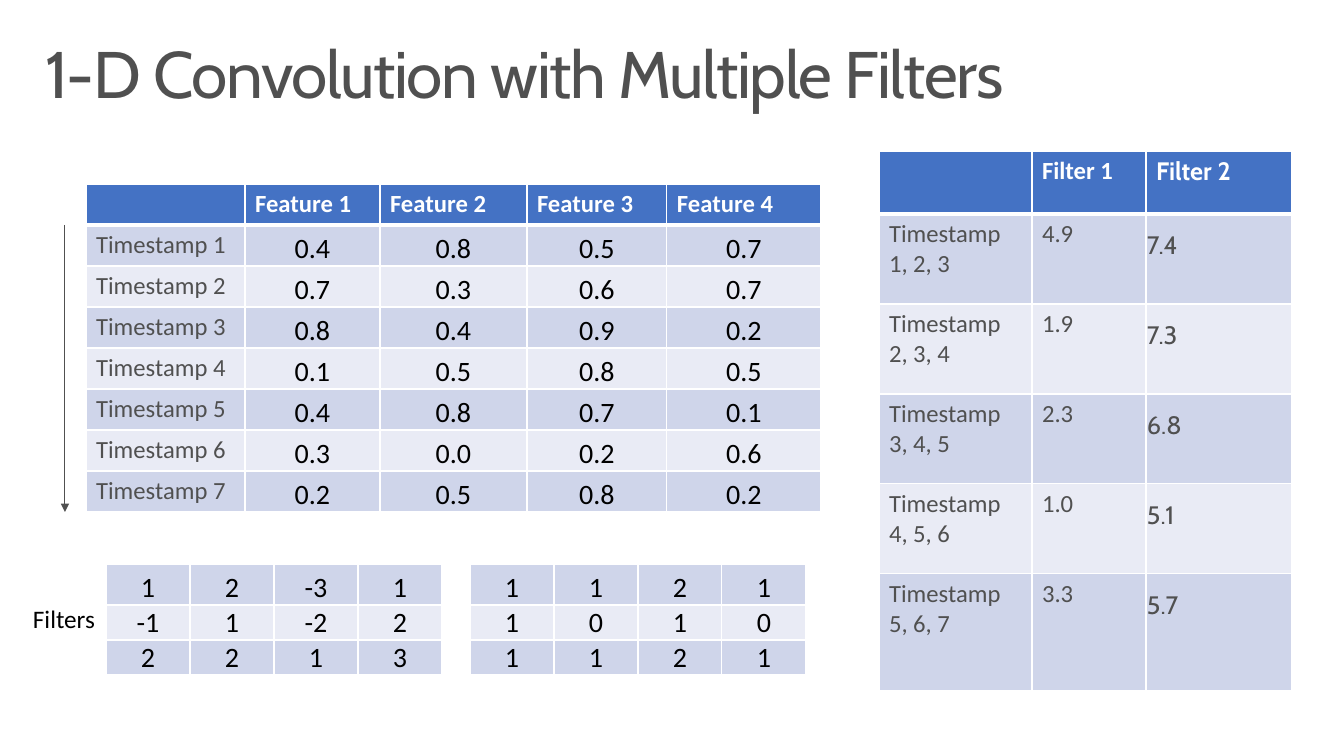
from lxml import etree
from pptx import Presentation, util as u
from pptx.dml.color import RGBColor
from pptx.enum import shapes, text
from pptx.oxml import ns

COLORS = {"header": "4472C4", "odd": "CFD5EA", "even": "E9EBF5",
          "white": "FFFFFF", "grey": "505050", "black": "000000"}

FEATURES = [
    ["", "Feature 1", "Feature 2", "Feature 3", "Feature 4"],
    ["Timestamp 1", "0.4", "0.8", "0.5", "0.7"],
    ["Timestamp 2", "0.7", "0.3", "0.6", "0.7"],
    ["Timestamp 3", "0.8", "0.4", "0.9", "0.2"],
    ["Timestamp 4", "0.1", "0.5", "0.8", "0.5"],
    ["Timestamp 5", "0.4", "0.8", "0.7", "0.1"],
    ["Timestamp 6", "0.3", "0.0", "0.2", "0.6"],
    ["Timestamp 7", "0.2", "0.5", "0.8", "0.2"],
]
RESULTS = [
    ["", "Filter 1", "Filter 2"],
    ["Timestamp 1, 2, 3", "4.9", "7.4"],
    ["Timestamp 2, 3, 4", "1.9", "7.3"],
    ["Timestamp 3, 4, 5", "2.3", "6.8"],
    ["Timestamp 4, 5, 6", "1.0", "5.1"],
    ["Timestamp 5, 6, 7", "3.3", "5.7"],
]
FILTERS = [
    [["1", "2", "-3", "1"], ["-1", "1", "-2", "2"], ["2", "2", "1", "3"]],
    [["1", "1", "2", "1"], ["1", "0", "1", "0"], ["1", "1", "2", "1"]],
]


def px(length):
    return u.Emu(round(length * 914400 / 100.8))


def rgb(name):
    return RGBColor.from_string(COLORS[name])


def write(paragraph, words, size, color, face="Calibri", bold=False):
    run = paragraph.add_run()
    run.text = words
    run.font.size = u.Pt(size)
    run.font.name = face
    run.font.bold = bold
    run.font.color.rgb = rgb(color)
    return run


def border(cell, top=1, bottom=1):
    """Give a cell white edges, with top and bottom widths in points."""
    props = cell._tc.get_or_add_tcPr()
    edges = {"a:lnL": 1, "a:lnR": 1, "a:lnT": top, "a:lnB": bottom}
    for place, (tag, width) in enumerate(edges.items()):
        edge = etree.Element(ns.qn(tag), w=str(u.Pt(width)))
        fill = etree.SubElement(edge, ns.qn("a:solidFill"))
        etree.SubElement(fill, ns.qn("a:srgbClr"), val=COLORS["white"])
        props.insert(place, edge)


def tighten(cell):
    cell.margin_left = cell.margin_right = cell.margin_top = px(1)
    cell.margin_bottom = 0


def number_cell(cell, words):
    tighten(cell)
    cell.vertical_anchor = text.MSO_ANCHOR.BOTTOM
    paragraph = cell.text_frame.paragraphs[0]
    paragraph.alignment = text.PP_ALIGN.CENTER
    write(paragraph, words, 20, "black")


def label_cell(cell, words):
    write(cell.text_frame.paragraphs[0], words, 17.6, "grey")


def second_result_cell(cell, words):
    tighten(cell)
    paragraph = cell.text_frame.paragraphs[0]
    paragraph.line_spacing = 1.5
    write(paragraph, words, 18, "grey", "Cabin")


def header_cell(cell, words):
    if words:
        face, size = ("Cabin", 18) if words == "Filter 2" else ("Calibri", 17.6)
        write(cell.text_frame.paragraphs[0], words, size, "white", face, True)


def grid(slide, left, top, widths, heights, rows, writers, header=True):
    """Place a banded table; writers holds one cell writer per column."""
    table = slide.shapes.add_table(len(rows), len(widths), px(left), px(top),
                                   px(sum(widths)), px(sum(heights))).table
    table.first_row = header
    table.horz_banding = False
    for column, width in zip(table.columns, widths):
        column.width = px(width)
    for r, (row, height) in enumerate(zip(rows, heights)):
        table.rows[r].height = px(height)
        is_header = header and r == 0
        band = "header" if is_header else "odd" if (r - header) % 2 == 0 else "even"
        for c, words in enumerate(row):
            cell = table.cell(r, c)
            (header_cell if is_header else writers[c])(cell, words)
            cell.fill.solid()
            cell.fill.fore_color.rgb = rgb(band)
            border(cell, top=3 if header and r == 1 else 1,
                   bottom=3 if is_header else 1)


def heading(slide, left, top, width, height):
    title = slide.shapes.title
    title.left, title.top, title.width, title.height = map(px, (left, top, width, height))
    frame = title.text_frame
    frame.margin_left = frame.margin_right = px(16)
    frame.margin_top = frame.margin_bottom = px(10)
    frame.vertical_anchor = text.MSO_ANCHOR.TOP
    frame.word_wrap = True
    frame.auto_size = text.MSO_AUTO_SIZE.NONE
    paragraph = frame.paragraphs[0]
    paragraph.alignment = text.PP_ALIGN.LEFT
    paragraph.line_spacing = 0.9
    run = write(paragraph, "1-D Convolution with Multiple Filters", 47, "grey", "Cabin")
    run.font._element.set("spc", "-100")


def time_arrow(slide, x, top, bottom):
    arrow = slide.shapes.add_connector(shapes.MSO_CONNECTOR.STRAIGHT,
                                       px(x), px(top), px(x), px(bottom))
    arrow.line.color.rgb = rgb("grey")
    arrow.line.width = u.Pt(0.75)
    etree.SubElement(arrow.line._get_or_add_ln(), ns.qn("a:tailEnd"), type="triangle")
    etree.SubElement(arrow._element.spPr, ns.qn("a:effectLst"))


def features(slide, left, top):
    row_height = 41
    heights = [row_height] * len(FEATURES)
    grid(slide, left, top, [159, 135, 147, 140, 154], heights, FEATURES,
         [label_cell] + [number_cell] * 4)
    time_arrow(slide, left - 21, top + row_height, top + sum(heights))


def filters(slide, left, top):
    label = slide.shapes.add_textbox(px(left), px(top + 34), px(83), px(40))
    label.text_frame.word_wrap = False
    write(label.text_frame.paragraphs[0], "Filters", 18, "black")
    for index, weights in enumerate(FILTERS):
        grid(slide, left + 83 + 364 * index, top, [84] * 4, [41, 35, 35],
             weights, [number_cell] * 4, header=False)


def results(slide, left, top):
    grid(slide, left, top, [153, 114, 146], [63] + [90] * 4 + [117], RESULTS,
         [label_cell, label_cell, second_result_cell])


def main():
    deck = Presentation()
    deck.slide_width, deck.slide_height = px(1344), px(756)
    slide = deck.slides.add_slide(deck.slide_layouts[5])
    heading(slide, 29, 32, 1285, 99)
    filters(slide, 23, 564)
    results(slide, 879, 151)
    features(slide, 86, 184)
    deck.save("out.pptx")


if __name__ == "__main__":
    main()
